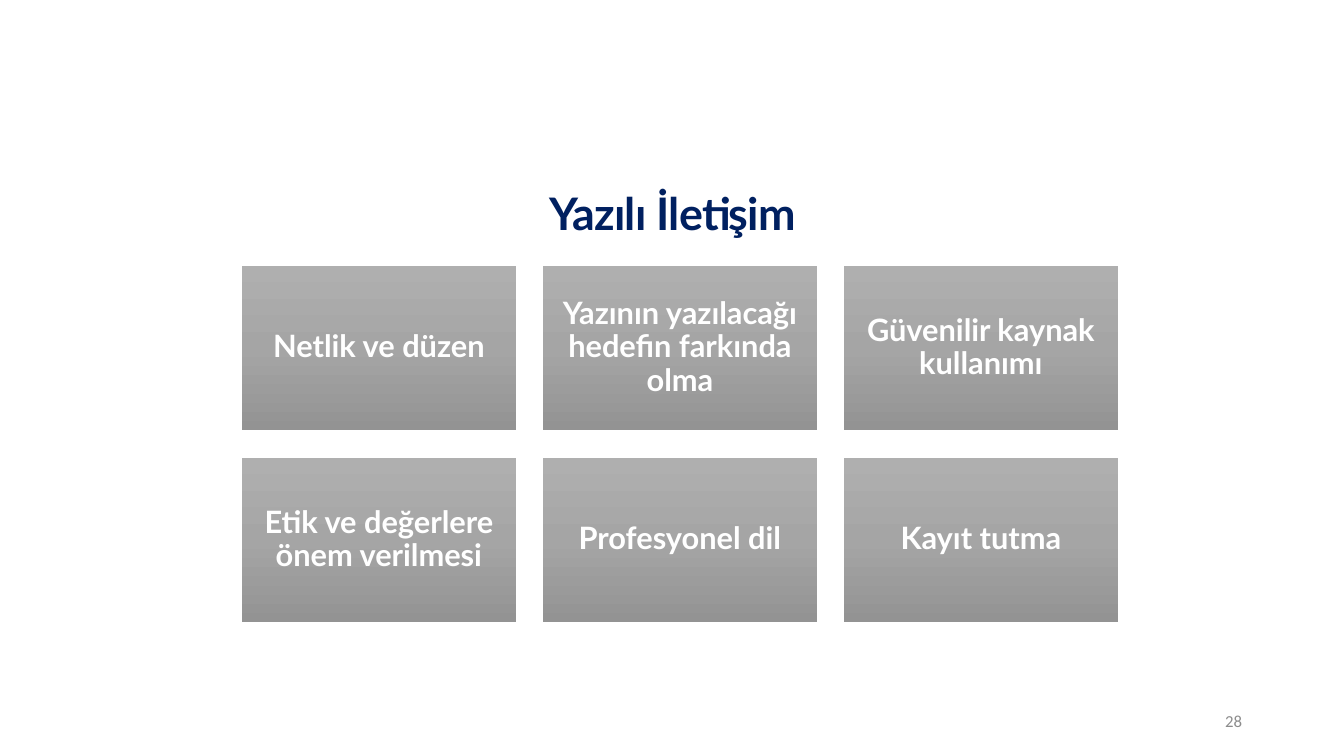
from copy import deepcopy

from pptx import Presentation
from pptx.dml.color import RGBColor
from pptx.enum.shapes import MSO_SHAPE
from pptx.enum.text import MSO_ANCHOR as Anchor, PP_ALIGN as Align
from pptx.oxml.ns import qn
from pptx.util import Emu, Pt

NAVY = RGBColor(0x00, 0x20, 0x60)
WHITE = RGBColor(0xFF, 0xFF, 0xFF)
PAGE_GRAY = RGBColor(0x8C, 0x8C, 0x8C)
TILE_STOPS = [
    (0, RGBColor(0xAF, 0xAF, 0xAF)),
    (0.5, RGBColor(0xA5, 0xA5, 0xA5)),
    (1, RGBColor(0x93, 0x93, 0x93)),
]

TOPICS = [
    "Netlik ve düzen",
    "Yazının yazılacağı hedefin farkında olma",
    "Güvenilir kaynak kullanımı",
    "Etik ve değerlere önem verilmesi",
    "Profesyonel dil",
    "Kayıt tutma",
]
COLUMNS = 3
GAP_X, GAP_Y = 27, 28
TILE_INSET = 9


def px(length):
    """Turn px into EMU at 100.8 px to the inch."""
    return Emu(round(length * 914400 / 100.8))


def write(shape, text, size, color, align, font="Lato", bold=True, spacing=0.9):
    frame = shape.text_frame
    frame.text = text
    frame.word_wrap = True
    frame.vertical_anchor = Anchor.MIDDLE
    para = frame.paragraphs[0]
    para.alignment = align
    para.line_spacing = spacing
    span = para.runs[0]
    span.font.name = font
    span.font.size = Pt(size)
    span.font.bold = bold
    span.font.color.rgb = color
    return span


def fill_gradient(shape):
    shape.fill.gradient()
    shape.fill.gradient_angle = 270
    # The default gradient has two stops; add the middle one
    stop_list = shape._element.spPr.find(qn("a:gradFill")).find(qn("a:gsLst"))
    stop_list.insert(1, deepcopy(stop_list[0]))
    for stop, (position, color) in zip(shape.fill.gradient_stops, TILE_STOPS):
        stop.position = position
        stop.color.rgb = color


def add_title(page, left, top, width, height):
    box = page.shapes.add_textbox(px(left), px(top), px(width), px(height))
    span = write(box, "Yazılı İletişim", 32, NAVY, Align.CENTER)
    # Letter spacing in hundredths of a point
    span.font._element.set("spc", "-50")


def add_tile(page, text, left, top, width, height):
    tile = page.shapes.add_shape(
        MSO_SHAPE.RECTANGLE, px(left), px(top), px(width), px(height))
    tile.shadow.inherit = False
    tile.line.fill.background()
    fill_gradient(tile)
    frame = tile.text_frame
    frame.margin_left = frame.margin_right = px(TILE_INSET)
    frame.margin_top = frame.margin_bottom = px(TILE_INSET)
    write(tile, text, 22, WHITE, Align.CENTER)


def add_topic_grid(page, left, top, width, height):
    rows = len(TOPICS) // COLUMNS
    tile_width = (width - GAP_X * (COLUMNS - 1)) / COLUMNS
    tile_height = (height - GAP_Y * (rows - 1)) / rows
    for index, topic in enumerate(TOPICS):
        row, column = divmod(index, COLUMNS)
        add_tile(page, topic,
                 left + column * (tile_width + GAP_X),
                 top + row * (tile_height + GAP_Y),
                 tile_width, tile_height)


def add_page_number(page, left, top, width, height):
    box = page.shapes.add_textbox(px(left), px(top), px(width), px(height))
    write(box, "28", 12, PAGE_GRAY, Align.RIGHT,
          font="Calibri", bold=False, spacing=1.0)


def main():
    deck = Presentation()
    deck.slide_width, deck.slide_height = px(1344), px(756)
    page = deck.slides.add_slide(deck.slide_layouts[6])
    add_title(page, 93, 143, 1159, 146)
    add_topic_grid(page, 242, 266, 876, 356)
    add_page_number(page, 950, 701, 302, 40)
    deck.save("out.pptx")


if __name__ == "__main__":
    main()
